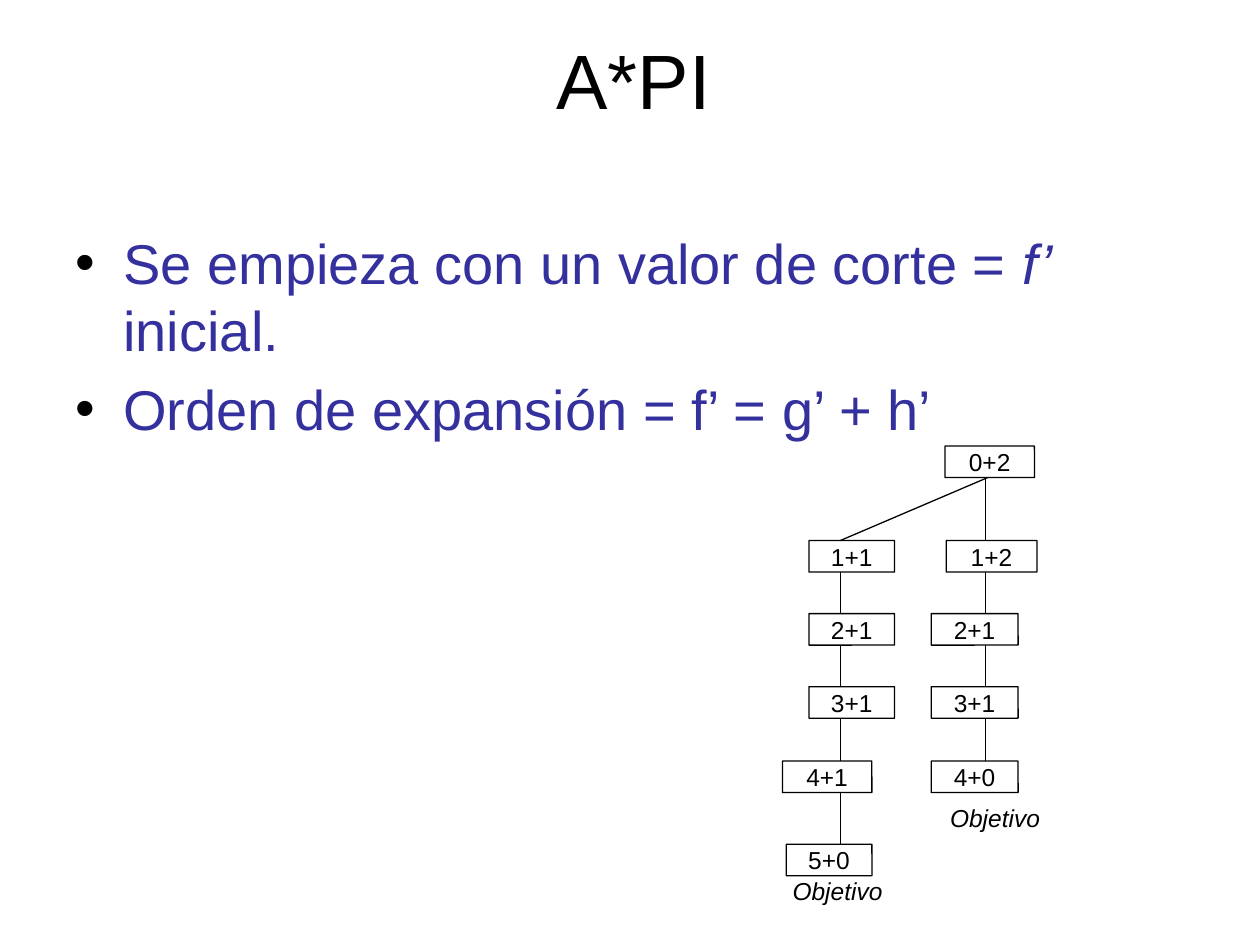
"""Build the A*PI slide: two bullets and a search tree."""
from lxml.etree import SubElement
from pptx import Presentation
from pptx.dml.color import RGBColor
from pptx.enum.shapes import MSO_CONNECTOR, MSO_SHAPE
from pptx.enum.text import MSO_ANCHOR, MSO_AUTO_SIZE, PP_ALIGN
from pptx.oxml.ns import qn
from pptx.util import Inches, Pt

THEME = {
    "font": "Arial",
    "ink": RGBColor(0, 0, 0),
    "blue": RGBColor(0x34, 0x30, 0x9D),
    "title": Pt(44),
    "body": Pt(32),
    "node": Pt(14),
    "line": Pt(0.75),
}

deck = Presentation()
deck.slide_width, deck.slide_height = Inches(10), Inches(7.5)
slide = deck.slides.add_slide(deck.slide_layouts[6])
shapes = slide.shapes


def write(shape, parts, size, color, pads, indent=(0.04, 0)):
    """Fill a shape with paragraphs of (text, italic) runs."""
    frame = shape.text_frame
    frame.word_wrap = True
    (frame.margin_left, frame.margin_top,
     frame.margin_right, frame.margin_bottom) = map(Inches, pads)
    for num, runs in enumerate(parts):
        para = frame.add_paragraph() if num else frame.paragraphs[0]
        props = para._p.get_or_add_pPr()
        props.set("marL", str(Inches(indent[0])))
        props.set("indent", str(Inches(indent[1])))
        for text, slant in runs:
            run = para.add_run()
            run.text = text
            run.font.name = THEME["font"]
            run.font.size = size
            run.font.italic = slant
            run.font.color.rgb = color
    return frame


def join(start, end):
    """Draw a thin black line between two points."""
    line = shapes.add_connector(MSO_CONNECTOR.STRAIGHT, *map(Inches, start + end))
    line.line.color.rgb = THEME["ink"]
    line.line.width = THEME["line"]
    SubElement(line._element.spPr, qn("a:effectLst"))


body = shapes.add_textbox(*map(Inches, (0.5, 1.75, 9, 5.75)))
points = [
    [("Se empieza con un valor de corte = ", False), ("f’", True), (" inicial.", False)],
    [("Orden de expansión = f’ = g’ + h’", False)],
]
frame = write(body, points, THEME["body"], THEME["blue"],
              (0.06, 0.06, 0.1, 0.06), (0.42, -0.38))
for para in frame.paragraphs:
    para.space_before = Pt(7)
    props = para._p.get_or_add_pPr()
    tint = SubElement(props, qn("a:buClr"))
    SubElement(tint, qn("a:srgbClr")).set("val", str(THEME["ink"]))
    SubElement(props, qn("a:buFont")).set("typeface", THEME["font"])
    SubElement(props, qn("a:buChar")).set("char", "•")

title = shapes.add_textbox(*map(Inches, (0.75, 0, 8.5, 1.25)))
frame = write(title, [[("A*PI", False)]], THEME["title"], THEME["ink"],
              (0.06, 0.06, 0.04, 0.06))
frame.vertical_anchor = MSO_ANCHOR.MIDDLE
frame.paragraphs[0].alignment = PP_ALIGN.CENTER

rows = [3.54, 4.29, 4.87, 5.45, 6.04, 6.7]
tall = 0.25
left, right = 6.67, 7.82
nodes = [
    ("0+2", 0, 7.5, 0.71),
    ("1+2", 1, 7.51, 0.72),
    ("2+1", 2, 7.39, 0.69),
    ("3+1", 3, 7.39, 0.69),
    ("4+0", 4, 7.39, 0.69),
    ("1+1", 1, 6.42, 0.68),
    ("2+1", 2, 6.42, 0.68),
    ("3+1", 3, 6.42, 0.68),
    ("4+1", 4, 6.21, 0.71),
    ("5+0", 5, 6.24, 0.68),
]
for text, row, x, wide in nodes:
    node = shapes.add_shape(MSO_SHAPE.ROUNDED_RECTANGLE,
                            *map(Inches, (x, rows[row], wide, tall)))
    node.adjustments[0] = 0.01
    node.shadow.inherit = False
    node.fill.background()
    node.line.color.rgb = THEME["ink"]
    node.line.width = THEME["line"]
    frame = write(node, [[(text, False)]], THEME["node"], THEME["ink"], (0, 0, 0.04, 0))
    frame.vertical_anchor = MSO_ANCHOR.MIDDLE
    frame.paragraphs[0].alignment = PP_ALIGN.CENTER

for x, first, last in [(left, 1, 5), (right, 0, 4)]:
    for row in range(first, last):
        join((x, rows[row] + tall), (x, rows[row + 1]))
join((7.84, rows[0] + tall), (left, rows[1]))

for x, y in [(6.25, 6.95), (7.5, 6.37)]:
    goal = shapes.add_textbox(*map(Inches, (x, y, 0.86, 0.24)))
    frame = write(goal, [[("Objetivo", True)]], THEME["node"], THEME["ink"], (0, 0, 0.04, 0))
    frame.word_wrap = False
    frame.auto_size = MSO_AUTO_SIZE.SHAPE_TO_FIT_TEXT

deck.save("out.pptx")
